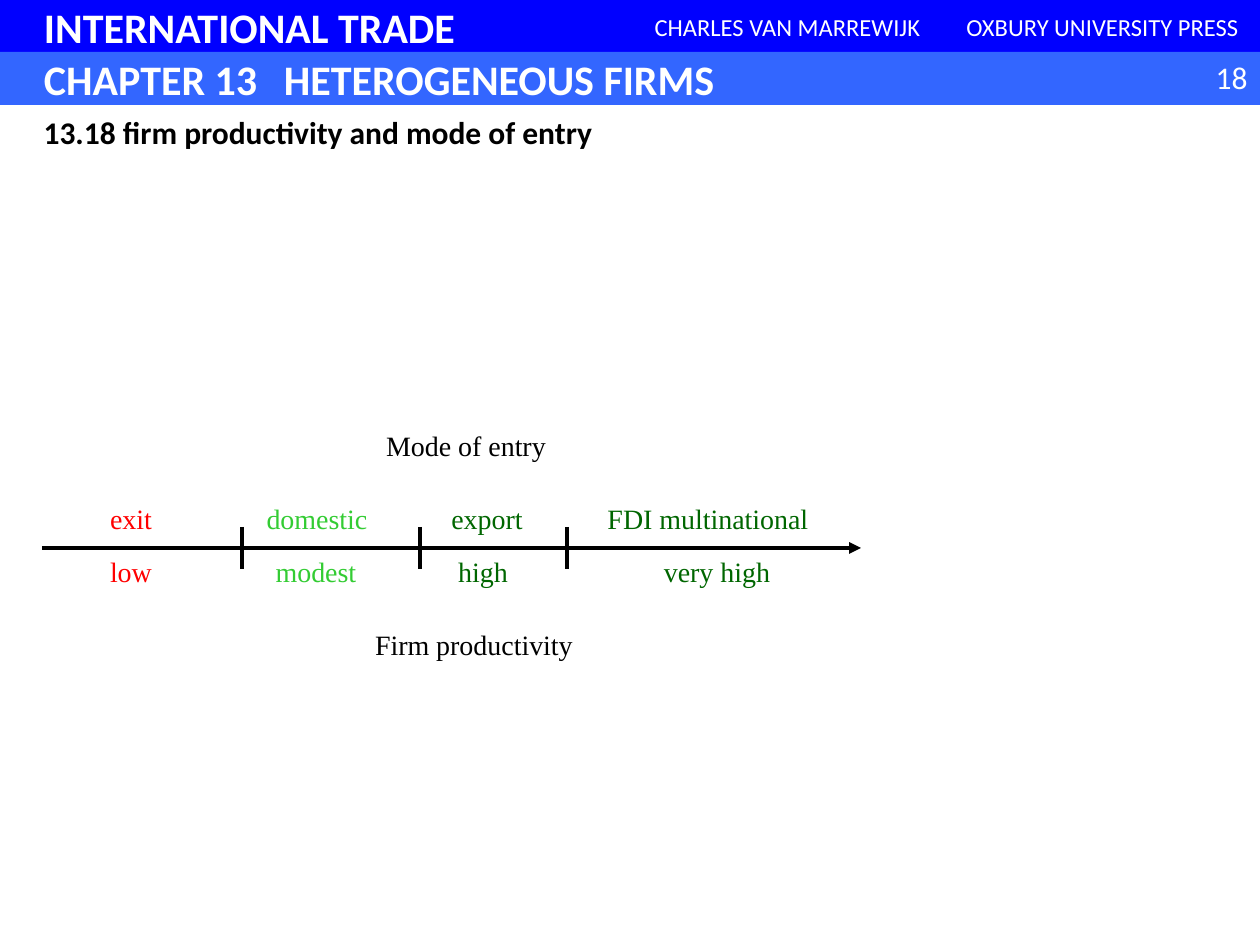
from dataclasses import dataclass
from lxml.etree import SubElement
from pptx import Presentation
from pptx.dml.color import RGBColor
from pptx.enum.shapes import MSO_CONNECTOR, MSO_SHAPE
from pptx.enum.text import MSO_ANCHOR, MSO_AUTO_SIZE, PP_ALIGN
from pptx.oxml.ns import qn
from pptx.util import Emu, Pt


@dataclass(frozen=True)
class Theme:
    heading_font: str = "Calibri"
    label_font: str = "Times New Roman"
    banner: RGBColor = RGBColor(0x00, 0x00, 0xFF)
    chapter: RGBColor = RGBColor(0x33, 0x66, 0xFF)
    white: RGBColor = RGBColor(0xFF, 0xFF, 0xFF)
    black: RGBColor = RGBColor(0x00, 0x00, 0x00)
    red: RGBColor = RGBColor(0xFF, 0x00, 0x00)
    light_green: RGBColor = RGBColor(0x33, 0xCC, 0x33)
    dark_green: RGBColor = RGBColor(0x00, 0x66, 0x00)
    heading_size: Pt = Pt(24)
    title_size: Pt = Pt(18)
    label_size: Pt = Pt(16)
    credit_size: Pt = Pt(14)
    line_width: Pt = Pt(2.25)


theme = Theme()


def px(*lengths):
    return [Emu(round(length * 914400 / 126)) for length in lengths]


def write(box, text, font, size, color, align=PP_ALIGN.LEFT, bold=False, anchor=MSO_ANCHOR.TOP):
    frame = box.text_frame
    frame.auto_size = MSO_AUTO_SIZE.NONE
    frame.vertical_anchor = anchor
    para = frame.paragraphs[0]
    para.text = text
    para.alignment = align
    para.font.name = font
    para.font.size = size
    para.font.bold = bold
    para.font.color.rgb = color
    return para


deck = Presentation()
deck.slide_width, deck.slide_height = px(1260, 945)
page = deck.slides.add_slide(deck.slide_layouts[5])

for top, fill, text in (
    (0, theme.banner, "INTERNATIONAL TRADE"),
    (52, theme.chapter, "CHAPTER 13\tHETEROGENEOUS FIRMS"),
):
    band = page.shapes.add_shape(MSO_SHAPE.RECTANGLE, *px(0, top, 1260, 53))
    band.shadow.inherit = False
    band.fill.solid()
    band.fill.fore_color.rgb = fill
    band.line.fill.background()
    band.text_frame.margin_left = px(44)[0]
    para = write(band, text, theme.heading_font, theme.heading_size, theme.white,
                 bold=True, anchor=MSO_ANCHOR.MIDDLE)
    if "\t" in text:
        stops = SubElement(para._p.get_or_add_pPr(), qn("a:tabLst"))
        para._p.pPr.insert(0, stops)
        SubElement(stops, qn("a:tab"), pos=str(px(240)[0]), algn="l")

for left, text in ((630, "CHARLES VAN MARREWIJK"), (945, "OXBURY UNIVERSITY PRESS")):
    credit = page.shapes.add_textbox(*px(left, 1, 315, 52))
    write(credit, text, theme.heading_font, theme.credit_size, theme.white,
          PP_ALIGN.CENTER, anchor=MSO_ANCHOR.MIDDLE)

number = page.shapes.add_textbox(*px(1176, 52, 84, 50))
write(number, "18", theme.heading_font, theme.title_size, theme.white, PP_ALIGN.RIGHT)

title = page.shapes.title
title.left, title.top, title.width, title.height = px(31, 107, 1198, 50)
write(title, "13.18 firm productivity and mode of entry", theme.heading_font,
      theme.title_size, theme.black, bold=True)

axis_y = 548
ticks = [(x, axis_y - 21, x, axis_y + 21) for x in (242, 420, 567)]
for ends in [(42, axis_y, 861, axis_y)] + ticks:
    line = page.shapes.add_connector(MSO_CONNECTOR.STRAIGHT, *px(*ends))
    line.line.color.rgb = theme.black
    line.line.width = theme.line_width
    if ends not in ticks:
        SubElement(line.line._get_or_add_ln(), qn("a:tailEnd"), type="triangle")
    SubElement(line._element.spPr, qn("a:effectLst"))

label_rows = (
    (422, ((466, "Mode of entry", theme.black),)),
    (495, ((131, "exit", theme.red), (317, "domestic", theme.light_green),
           (487, "export", theme.dark_green), (708, "FDI multinational", theme.dark_green))),
    (548, ((131, "low", theme.red), (316, "modest", theme.light_green),
           (483, "high", theme.dark_green), (717, "very high", theme.dark_green))),
    (621, ((474, "Firm productivity", theme.black),)),
)
for top, labels in label_rows:
    for center, text, color in labels:
        width = 40 + 14 * len(text)
        label = page.shapes.add_textbox(*px(center - width / 2, top, width, 50))
        write(label, text, theme.label_font, theme.label_size, color, PP_ALIGN.CENTER)

deck.save("out.pptx")
